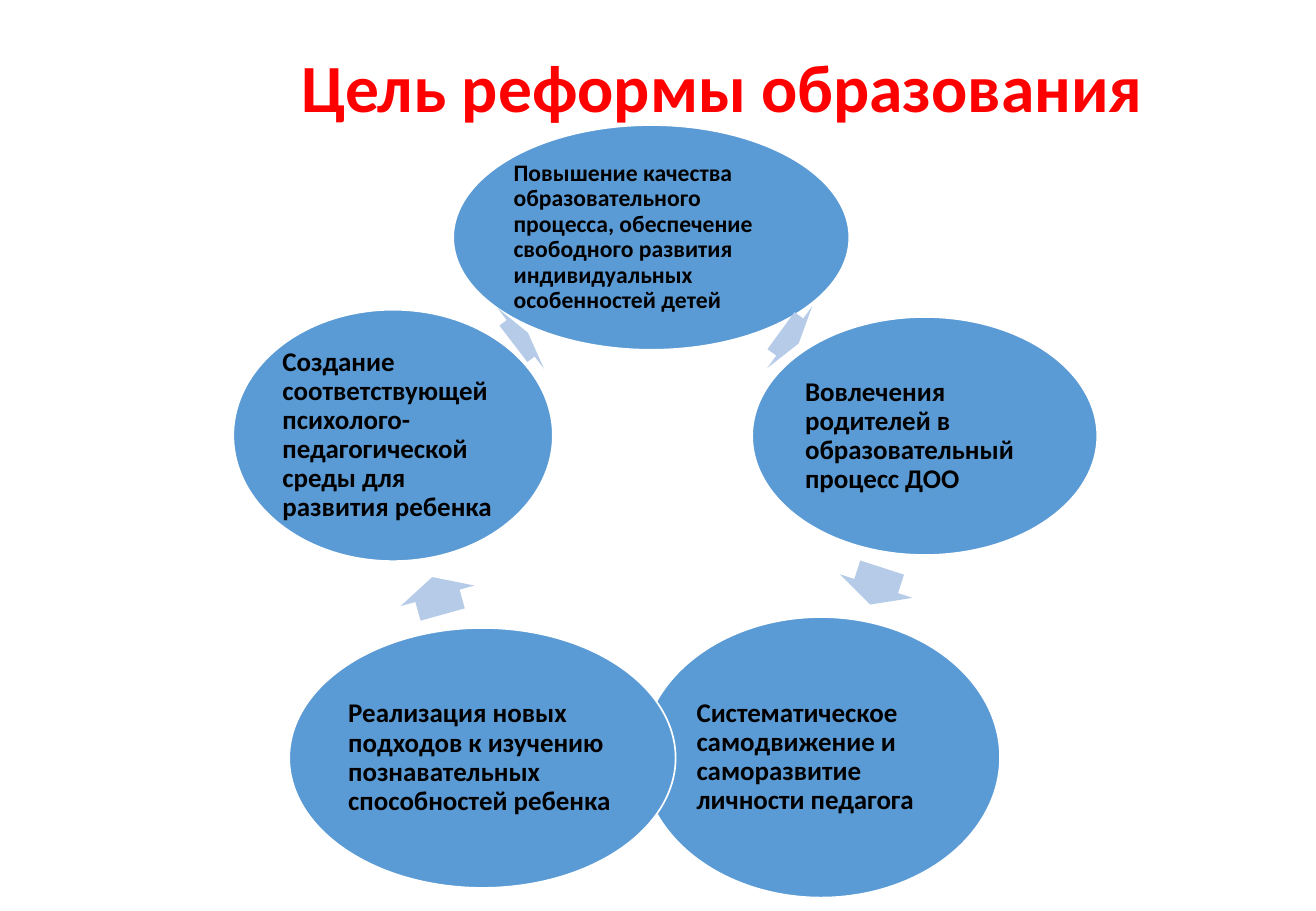
import pptx
import pptx.dml.color
import pptx.enum.shapes
import pptx.enum.text
import pptx.util

Inches = pptx.util.Inches
SHAPE = pptx.enum.shapes.MSO_SHAPE
ANCHOR = pptx.enum.text.MSO_ANCHOR

TITLE_FONT = {"name": "Calibri", "size": pptx.util.Pt(40), "bold": True}
GOAL_FONT = {"name": "Calibri", "bold": True}

# Goals clockwise from the top: left, top, width, height, text size, text
GOALS = [
    (3.73, 1.03, 3.26, 1.85, 14,
     "Повышение качества образовательного процесса, обеспечение "
     "свободного развития индивидуальных особенностей детей"),
    (6.19, 2.61, 2.84, 1.96, 16,
     "Вовлечения родителей в образовательный процесс ДОО"),
    (5.28, 5.08, 2.95, 2.31, 16,
     "Систематическое самодвижение и саморазвитие личности педагога"),
    (2.38, 5.17, 3.18, 2.14, 16,
     "Реализация новых подходов к изучению познавательных "
     "способностей ребенка"),
    (1.92, 2.55, 2.63, 2.07, 16,
     "Создание соответствующей психолого-педагогической среды "
     "для развития ребенка"),
]

# Arrow after each goal: left, top, width, rotation (None where ovals overlap)
ARROWS = [
    (6.41, 2.46, 0.18, 36),
    (7.05, 4.51, 0.32, 108),
    None,
    (3.44, 4.59, 0.32, 254.4),
    (4.21, 2.47, 0.15, 322.5),
]
ARROW_HEIGHT = 0.63


def rgb(value):
    return pptx.dml.color.RGBColor.from_string(value)


def set_attrs(obj, values):
    for name, value in values.items():
        setattr(obj, name, value)


def write_text(tf, text, font, color, frame):
    set_attrs(tf, {"word_wrap": True, **frame})
    p = tf.paragraphs[0]
    set_attrs(p, {"alignment": pptx.enum.text.PP_ALIGN.LEFT,
                  "line_spacing": 0.9})
    r = p.add_run()
    r.text = text
    set_attrs(r.font, font)
    r.font.color.rgb = rgb(color)


def add_filled(slide, kind, box, fill):
    sp = slide.shapes.add_shape(kind, *(Inches(v) for v in box))
    sp.shadow.inherit = False
    sp.fill.solid()
    sp.fill.fore_color.rgb = rgb(fill)
    sp.line.fill.background()
    return sp


def add_title(slide, text):
    sp = slide.shapes.add_textbox(
        Inches(2.38), Inches(0.4), Inches(7.7), Inches(0.92))
    write_text(sp.text_frame, text, TITLE_FONT, "FF0000",
               {"vertical_anchor": ANCHOR.TOP})


def add_goal(slide, left, top, width, height, size, text):
    sp = add_filled(slide, SHAPE.OVAL, (left, top, width, height), "5B9BD5")
    sp.line.color.rgb = rgb("FFFFFF")
    sp.line.width = pptx.util.Pt(1)
    frame = {f"margin_{side}": Inches(0.02)
             for side in ("left", "top", "right", "bottom")}
    frame["vertical_anchor"] = ANCHOR.MIDDLE
    write_text(sp.text_frame, text,
               {**GOAL_FONT, "size": pptx.util.Pt(size)}, "000000", frame)


def add_arrow(slide, left, top, width, rotation):
    sp = add_filled(slide, SHAPE.RIGHT_ARROW,
                    (left, top, width, ARROW_HEIGHT), "B5CBE7")
    sp.adjustments[0] = 0.6
    sp.adjustments[1] = 0.5
    sp.rotation = rotation


def main():
    prs = pptx.Presentation()
    prs.slide_width = Inches(10.83)
    prs.slide_height = Inches(7.5)
    slide = prs.slides.add_slide(prs.slide_layouts[6])

    # Title
    add_title(slide, "Цель реформы образования")

    # Cycle of goals
    for goal, arrow in zip(GOALS, ARROWS):
        add_goal(slide, *goal)
        if arrow:
            add_arrow(slide, *arrow)

    prs.save("out.pptx")


if __name__ == "__main__":
    main()
